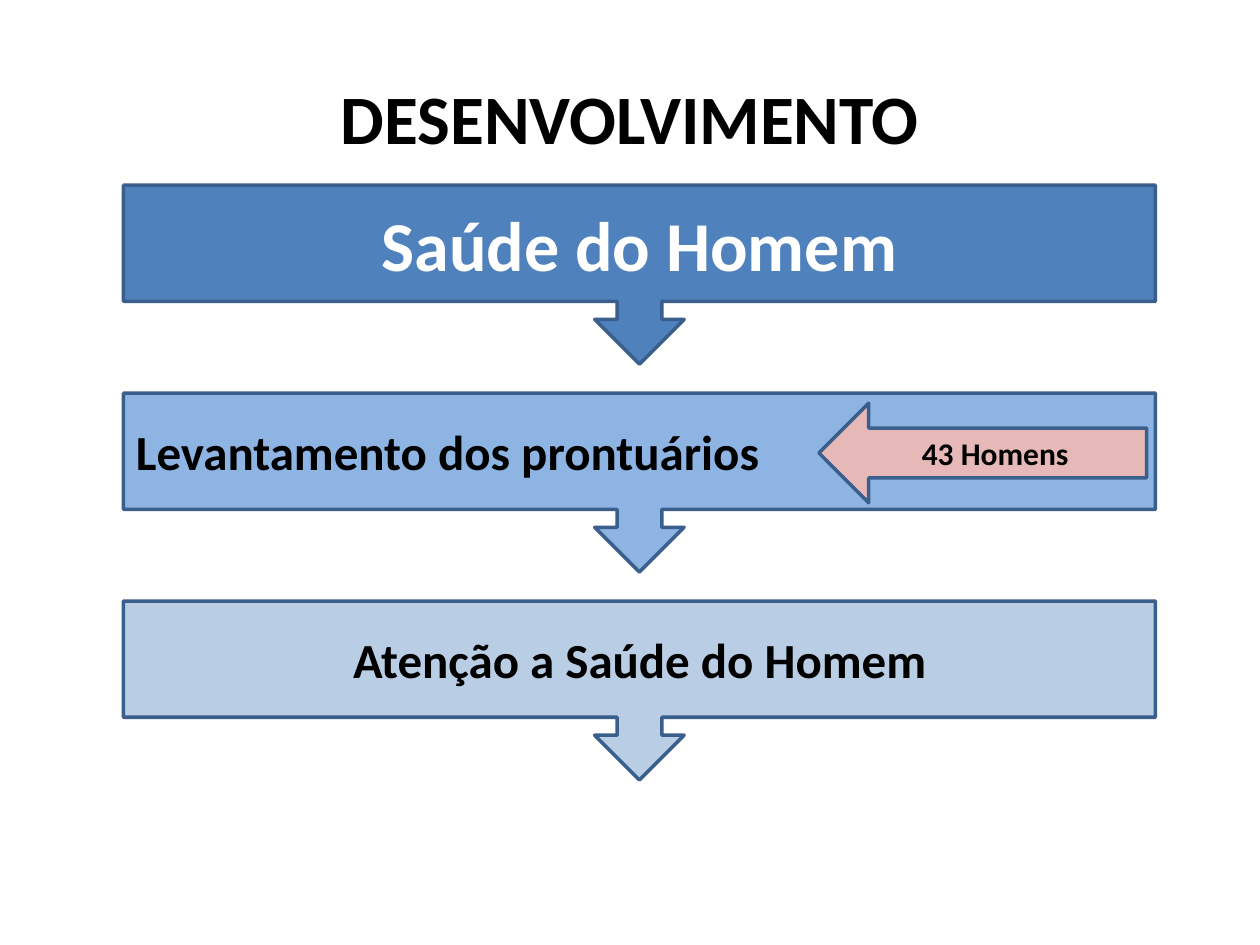
from dataclasses import dataclass

from pptx import Presentation
from pptx.dml.color import RGBColor
from pptx.enum.shapes import MSO_SHAPE as Shape
from pptx.enum.text import MSO_ANCHOR as Anchor, PP_ALIGN as Align
from pptx.util import Inches, Pt


@dataclass(frozen=True)
class Theme:
    font: str = "Calibri"
    black: str = "000000"
    white: str = "FFFFFF"
    outline: str = "3A5F8C"
    blue: str = "4F81BD"
    sky: str = "8EB4E3"
    pale: str = "B9CDE5"
    rose: str = "E6B9B8"
    title_size: float = 39.6
    heading_size: float = 40
    step_size: float = 28
    note_size: float = 18
    line_width: float = 2


class SlideBuilder:
    def __init__(self, slide, theme):
        self.slide = slide
        self.theme = theme

    def set_text(self, shape, text, size, color, align=Align.CENTER):
        frame = shape.text_frame
        frame.word_wrap = True
        frame.vertical_anchor = Anchor.MIDDLE
        paragraph = frame.paragraphs[0]
        paragraph.text = text
        paragraph.alignment = align
        font = paragraph.runs[0].font
        formats = {"name": self.theme.font, "size": Pt(size), "bold": True}
        for name, value in formats.items():
            setattr(font, name, value)
        font.color.rgb = RGBColor.from_string(color)

    def title(self, text, left, top, width, height):
        shape = self.slide.shapes.title
        position = {"left": left, "top": top, "width": width, "height": height}
        for name, value in position.items():
            setattr(shape, name, Inches(value))
        self.set_text(shape, text, self.theme.title_size, self.theme.black)

    def block(self, kind, box, fill, text, size, color, align=Align.CENTER):
        shape = self.slide.shapes.add_shape(kind, *map(Inches, box))
        shape.shadow.inherit = False
        shape.fill.solid()
        shape.fill.fore_color.rgb = RGBColor.from_string(fill)
        shape.line.color.rgb = RGBColor.from_string(self.theme.outline)
        shape.line.width = Pt(self.theme.line_width)
        self.set_text(shape, text, size, color, align)


def main():
    theme = Theme()
    presentation = Presentation()
    presentation.slide_width = Inches(10)
    presentation.slide_height = Inches(7.5)
    title_only = presentation.slide_layouts[5]
    builder = SlideBuilder(presentation.slides.add_slide(title_only), theme)

    builder.title("DESENVOLVIMENTO", 0.5, 0.3, 9, 1.25)

    steps = [
        (theme.blue, "Saúde do Homem", theme.heading_size, theme.white, Align.CENTER),
        (theme.sky, "Levantamento dos prontuários", theme.step_size, theme.black, Align.LEFT),
        (theme.pale, "Atenção a Saúde do Homem", theme.step_size, theme.black, Align.CENTER),
    ]
    first_top, pitch = 1.47, 1.65
    for index, step in enumerate(steps):
        box = (0.98, first_top + index * pitch, 8.19, 1.42)
        builder.block(Shape.DOWN_ARROW_CALLOUT, box, *step)

    builder.block(Shape.LEFT_ARROW, (6.5, 3.2, 2.6, 0.79), theme.rose,
                  "43 Homens", theme.note_size, theme.black)

    presentation.save("out.pptx")


if __name__ == "__main__":
    main()
